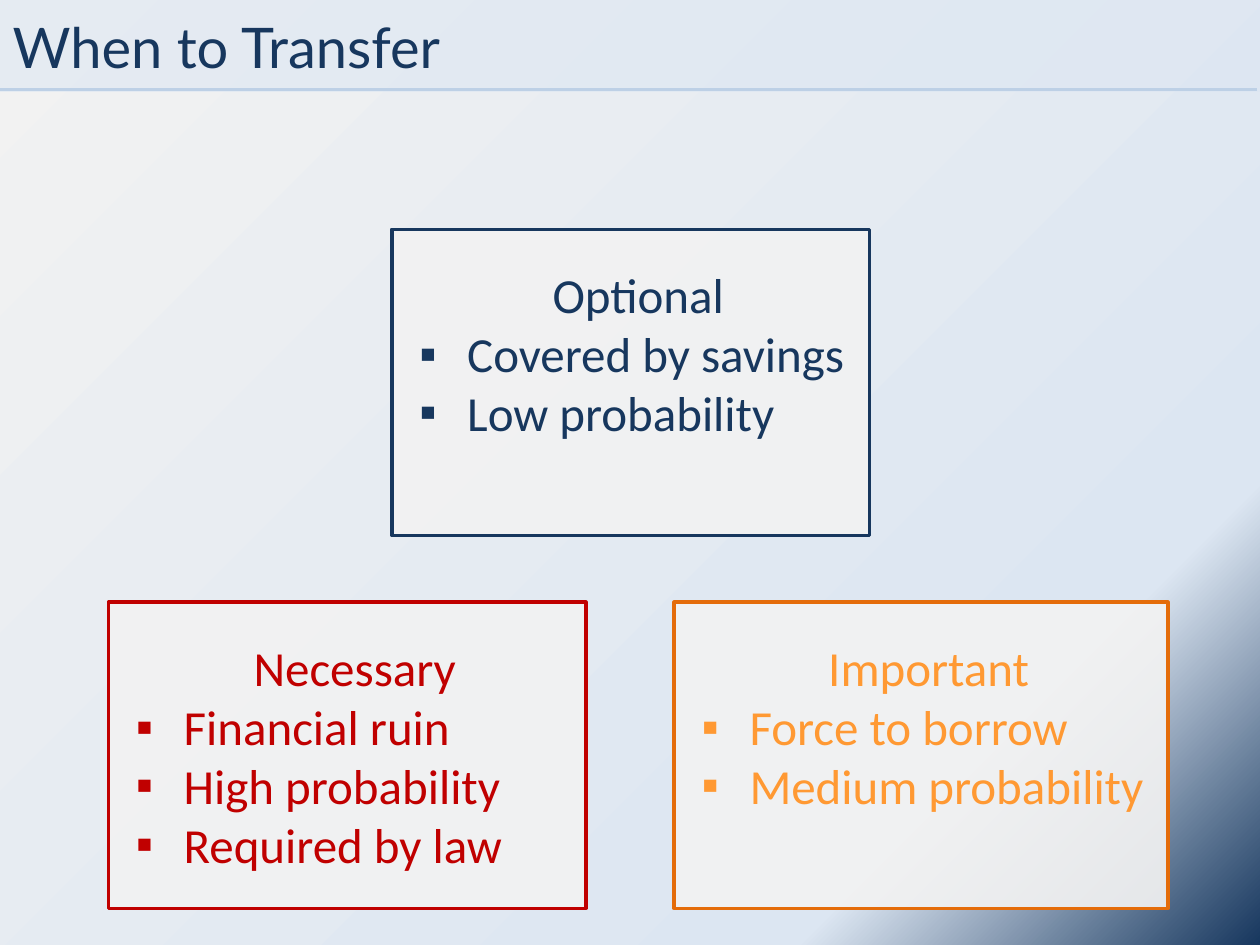
from copy import deepcopy
from dataclasses import dataclass

from lxml.etree import SubElement as Sub
from pptx import Presentation
from pptx.dml.color import RGBColor as Rgb
from pptx.enum.shapes import MSO_CONNECTOR as Link, MSO_SHAPE as Kind
from pptx.enum.text import MSO_ANCHOR as Anchor, PP_ALIGN as Align
from pptx.oxml.ns import qn
from pptx.util import Inches, Pt


@dataclass(frozen=True)
class Theme:
    navy: str = "17375E"
    red: str = "C00000"
    orange: str = "E46C0A"
    amber: str = "FF9933"
    rule: str = "95B3D7"
    band: str = "DCE6F2"
    pale: str = "F2F2F2"
    head: str = "Lato"
    body: str = "Calibri"
    big: int = 32
    mid: int = 28


T = Theme()


def paint(shape, color, alpha):
    """Give a shape a solid fill with an opacity in percent."""
    shape.fill.solid()
    shape.fill.fore_color.rgb = Rgb.from_string(color)
    tone = shape.element.spPr.find(qn("a:solidFill")).find(qn("a:srgbClr"))
    Sub(tone, qn("a:alpha"), val=str(alpha * 1000))


def style(para, face, size, color):
    for run in para.runs:
        run.font.name = face
        run.font.size = Pt(size)
        run.font.color.rgb = Rgb.from_string(color)


def indent(para, left, first=0, mark=None):
    """Set the indents in inches and an optional bullet."""
    props = para._p.get_or_add_pPr()
    props.set("marL", str(Inches(left)))
    props.set("indent", str(Inches(first)))
    if mark:
        Sub(props, qn("a:buFont"), typeface="Arial")
        Sub(props, qn("a:buChar"), char=mark)


def add_back(slide):
    fill = slide.background.fill
    fill.gradient()
    fill.gradient_angle = 315
    stops = slide.element.find(".//" + qn("a:gsLst"))
    stops.append(deepcopy(stops[-1]))
    tones = [(0, T.pale), (0.79, T.band), (1, T.navy)]
    for stop, (place, color) in zip(fill.gradient_stops, tones):
        stop.position = place
        stop.color.rgb = Rgb.from_string(color)


def add_rule(slide, y):
    line = slide.shapes.add_connector(
        Link.STRAIGHT, Inches(9.98), Inches(y), Inches(0), Inches(y))
    line.line.color.rgb = Rgb.from_string(T.rule)
    line.line.width = Pt(1.5)
    Sub(line.element.spPr, qn("a:effectLst"))


def add_card(slide, x, y, width, edge, ink, title, points):
    card = slide.shapes.add_shape(
        Kind.RECTANGLE, Inches(x), Inches(y), Inches(width), Inches(2.43))
    card.shadow.inherit = False
    paint(card, T.pale, 92)
    card.line.color.rgb = Rgb.from_string(edge)
    card.line.width = Pt(2)
    frame = card.text_frame
    frame.word_wrap = True
    frame.vertical_anchor = Anchor.TOP

    # Heading
    para = frame.paragraphs[0]
    para.text = title
    para.level = 1
    para.alignment = Align.CENTER
    para.line_spacing = 1.5
    indent(para, 0.12)
    style(para, T.body, T.mid, ink)

    # Bullets
    for point in points:
        para = frame.add_paragraph()
        para.text = point
        para.level = 2
        para.alignment = Align.LEFT
        indent(para, 0.5, -0.38, "▪")
        style(para, T.body, T.mid, ink)


def set_title(slide, text):
    title = slide.shapes.title
    title.left, title.top = Inches(0), Inches(0)
    title.width, title.height = Inches(10), Inches(0.73)
    paint(title, T.band, 57)
    frame = title.text_frame
    frame.text = text
    frame.vertical_anchor = Anchor.MIDDLE
    para = frame.paragraphs[0]
    para.alignment = Align.LEFT
    style(para, T.head, T.big, T.navy)
    # The translucent band lies over the rule
    slide.shapes._spTree.append(title.element)


def main():
    deck = Presentation()
    deck.slide_width, deck.slide_height = Inches(10), Inches(7.5)
    slide = deck.slides.add_slide(deck.slide_layouts[5])
    add_back(slide)
    add_rule(slide, 0.71)

    # Left, top, width, edge, ink, heading, bullets
    cards = [
        (0.86, 4.78, 3.79, T.red, T.red, "Necessary",
         ["Financial ruin", "High probability", "Required by law"]),
        (3.11, 1.82, 3.79, T.navy, T.navy, "Optional",
         ["Covered by savings", "Low probability"]),
        (5.35, 4.78, 3.92, T.orange, T.amber, "Important",
         ["Force to borrow", "Medium probability"]),
    ]
    for card in cards:
        add_card(slide, *card)

    set_title(slide, "When to Transfer")
    deck.save("out.pptx")


if __name__ == "__main__":
    main()
